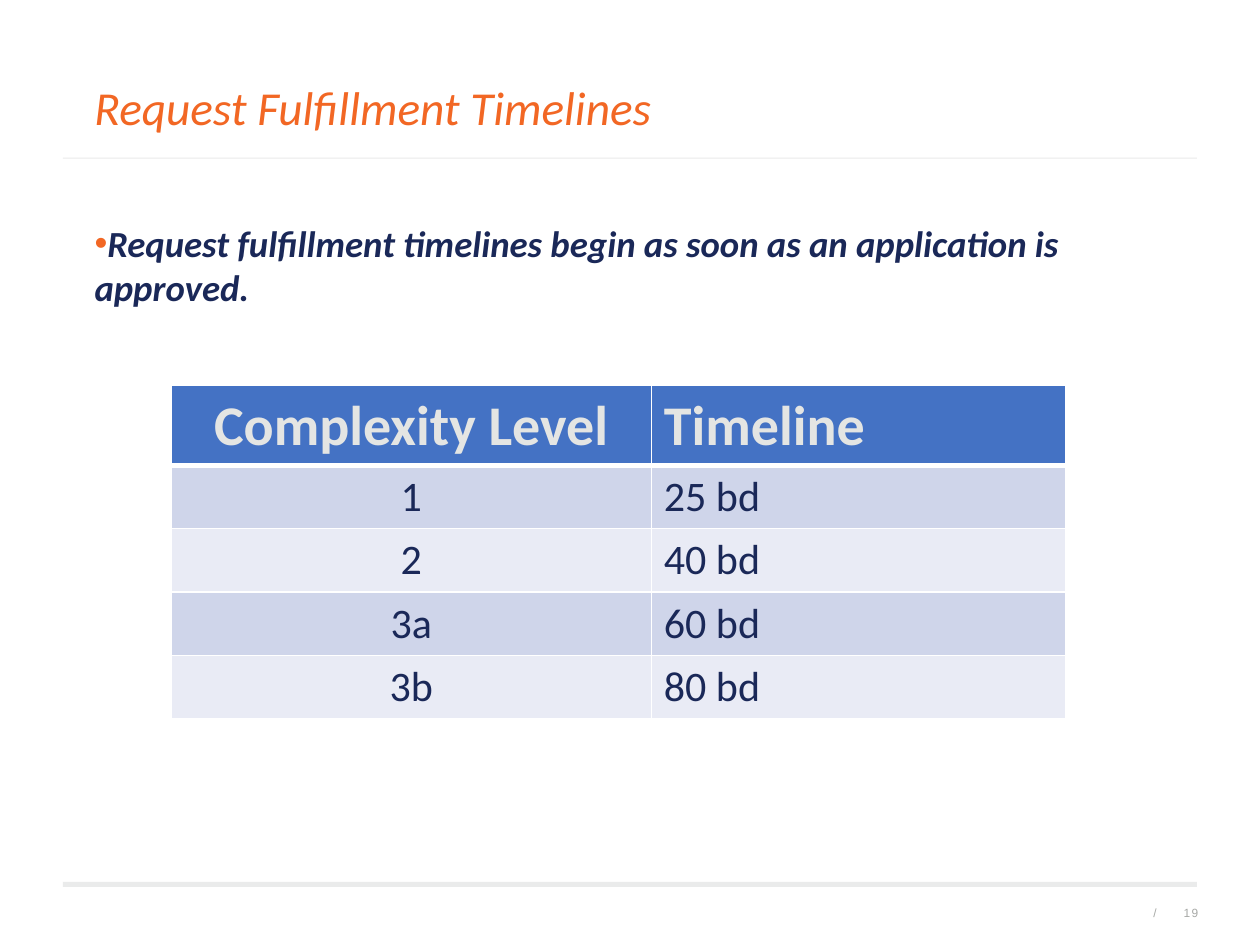
from dataclasses import dataclass

from lxml import etree
from pptx import Presentation
from pptx.dml.color import RGBColor
from pptx.enum.shapes import MSO_SHAPE
from pptx.enum.text import MSO_ANCHOR, PP_ALIGN
from pptx.oxml.ns import qn
from pptx.util import Inches, Pt

RECTANGLE = MSO_SHAPE.RECTANGLE
TOP, MIDDLE = MSO_ANCHOR.TOP, MSO_ANCHOR.MIDDLE
LEFT, CENTER, RIGHT = PP_ALIGN.LEFT, PP_ALIGN.CENTER, PP_ALIGN.RIGHT
BLANK_LAYOUT = 6


@dataclass(frozen=True)
class Theme:
    accent: str = "F26724"
    ink: str = "1A2858"
    rule: str = "EAEBEB"
    muted: str = "A7A9A6"
    header_fill: str = "4472C4"
    header_ink: str = "E4E5E3"
    bands: tuple = ("CFD5EA", "E9EBF5")
    border: str = "FFFFFF"
    font: str = "Calibri"
    footer_font: str = "Arial"
    title_size: float = 27
    body_size: float = 21
    header_size: float = 32
    cell_size: float = 24
    footer_size: float = 6.8


THEME = Theme()
ROWS = [("Complexity Level", "Timeline"), ("1", "25 bd"), ("2", "40 bd"),
        ("3a", "60 bd"), ("3b", "80 bd")]


def inches(box):
    return [Inches(length) for length in box]


def write(frame, text, *, size, color, font=THEME.font, bold=False, italic=False,
          align=LEFT, tracking=0, line_spacing=None, bullet=None):
    """Put one formatted paragraph in a text frame."""
    para = frame.paragraphs[0]
    para.alignment = align
    if line_spacing:
        para.line_spacing = line_spacing
    if bullet:
        props = para._p.get_or_add_pPr()
        props.set("marL", "0")
        props.set("indent", str(Inches(-0.19)))
        tint = etree.SubElement(props, qn("a:buClr"))
        etree.SubElement(tint, qn("a:srgbClr"), val=bullet)
        etree.SubElement(props, qn("a:buFont"), typeface="Arial")
        etree.SubElement(props, qn("a:buChar"), char="•")
    span = para.add_run()
    span.text = text
    span.font.name, span.font.size = font, Pt(size)
    span.font.bold, span.font.italic = bold, italic
    span.font.color.rgb = RGBColor.from_string(color)
    if tracking:
        span._r.get_or_add_rPr().set("spc", str(round(tracking * 100)))


def add_text(page, box, text, *, anchor=TOP, wrap=True, **style):
    frame = page.shapes.add_textbox(*inches(box)).text_frame
    frame.margin_left = frame.margin_right = frame.margin_top = frame.margin_bottom = 0
    frame.word_wrap = wrap
    frame.vertical_anchor = anchor
    write(frame, text, **style)


def add_rule(page, box):
    rule = page.shapes.add_shape(RECTANGLE, *inches(box))
    rule.shadow.inherit = False
    rule.fill.solid()
    rule.fill.fore_color.rgb = RGBColor.from_string(THEME.rule)
    rule.line.fill.background()


def set_borders(cell, **widths):
    props = cell._tc.get_or_add_tcPr()
    for index, side in enumerate("LRTB"):
        line = etree.Element(qn(f"a:ln{side}"), w=str(Pt(widths.get(side, 1))))
        fill = etree.SubElement(line, qn("a:solidFill"))
        etree.SubElement(fill, qn("a:srgbClr"), val=THEME.border)
        props.insert(index, line)


def add_header(page, box):
    """Title above a thin rule along the bottom of the box."""
    left, top, width, height = box
    inset = 0.25
    add_text(page, (left + inset, top, 6.5, 0.61), "Request Fulfillment Timelines",
             anchor=MIDDLE, wrap=False, italic=True,
             size=THEME.title_size, color=THEME.accent)
    add_rule(page, (left, top + height, width, 0.01))


def add_body(page, box):
    add_text(page, box,
             "Request fulfillment timelines begin as soon as an application is approved.",
             size=THEME.body_size, color=THEME.ink, bold=True, italic=True,
             bullet=THEME.accent)


def add_timeline_table(page, box):
    """Header row above banded rows of equal height."""
    left, top, width, height = box
    header_height = 0.63
    row_height = (height - header_height) / (len(ROWS) - 1)
    first_column = 3.81
    table = page.shapes.add_table(len(ROWS), 2, *inches(box)).table
    for column, size in zip(table.columns, (first_column, width - first_column)):
        column.width = Inches(size)
    for r, texts in enumerate(ROWS):
        header = r == 0
        table.rows[r].height = Inches(header_height if header else row_height)
        fill = THEME.header_fill if header else THEME.bands[(r - 1) % 2]
        for c, text in enumerate(texts):
            cell = table.cell(r, c)
            cell.fill.solid()
            cell.fill.fore_color.rgb = RGBColor.from_string(fill)
            set_borders(cell, T=3 if r == 1 else 1, B=3 if header else 1)
            write(cell.text_frame, text, bold=header,
                  align=CENTER if c == 0 else LEFT,
                  size=THEME.header_size if header else THEME.cell_size,
                  color=THEME.header_ink if header else THEME.ink)


def add_footer(page, box):
    """Thick rule with the page number under its right end."""
    left, top, width, height = box
    add_rule(page, (left, top, width, 0.04))
    label_width, step = 0.38, 0.33
    for index, text in enumerate(("19", "/")):
        label_left = left + width + 0.01 - label_width - index * step
        add_text(page, (label_left, top + height - 0.25, label_width, 0.25), text,
                 anchor=MIDDLE, align=RIGHT, font=THEME.footer_font,
                 size=THEME.footer_size, color=THEME.muted,
                 tracking=0.8, line_spacing=0.8)


def main():
    deck = Presentation()
    deck.slide_width, deck.slide_height = Inches(10), Inches(7.5)
    page = deck.slides.add_slide(deck.slide_layouts[BLANK_LAYOUT])
    margin, content_width = 0.5, 9
    add_footer(page, (margin, 7, content_width, 0.38))
    add_header(page, (margin, 0.54, content_width, 0.71))
    add_body(page, (0.75, 1.75, 8.75, 5))
    add_timeline_table(page, (1.36, 3.06, 7.1, 2.64))
    deck.save("out.pptx")


if __name__ == "__main__":
    main()
